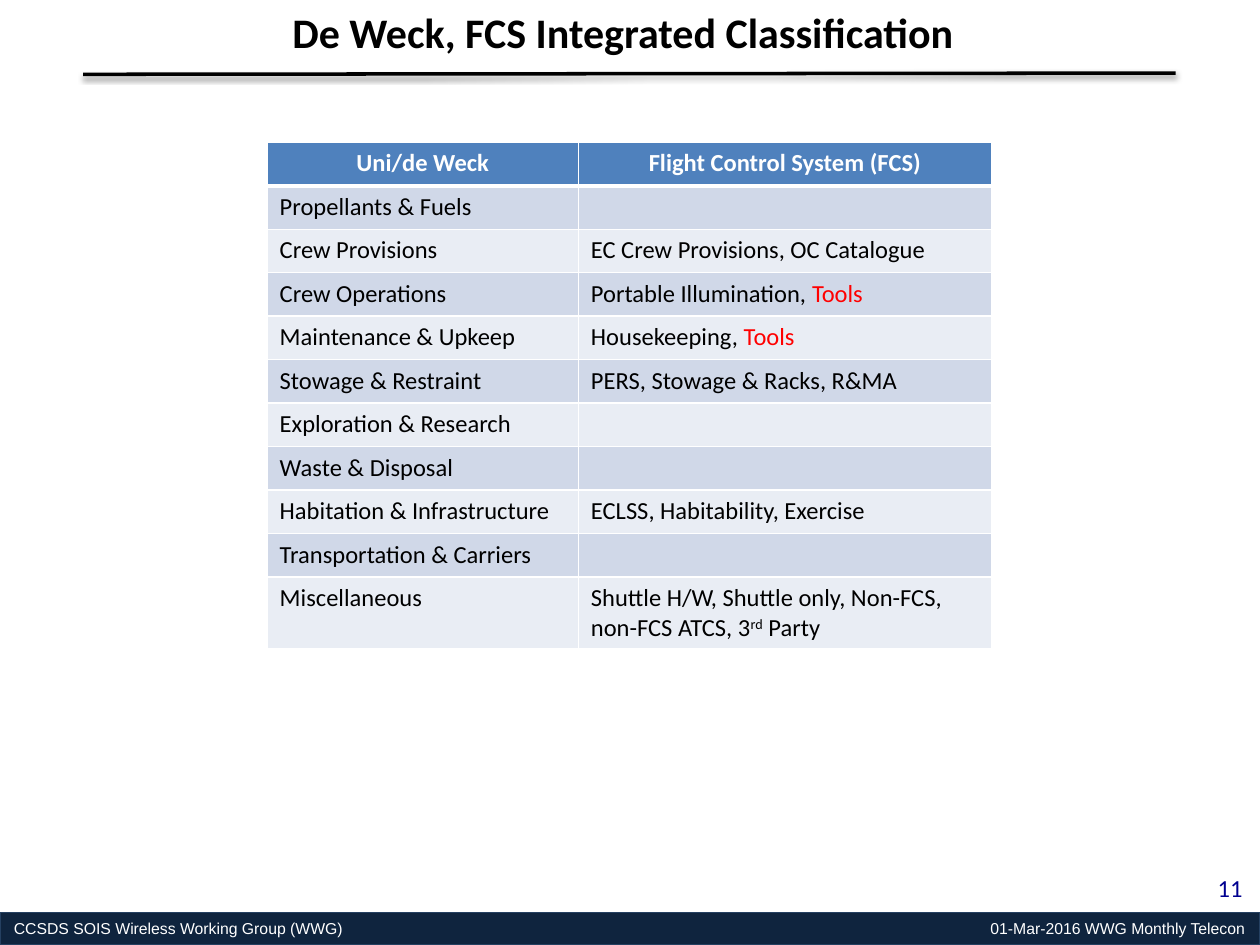
from lxml import etree
from pptx import Presentation
from pptx.dml.color import RGBColor
from pptx.enum.shapes import MSO_CONNECTOR, MSO_SHAPE
from pptx.enum.text import MSO_ANCHOR, MSO_AUTO_SIZE, PP_ALIGN
from pptx.oxml import parse_xml
from pptx.oxml.ns import qn
from pptx.util import Inches, Pt

STRAIGHT = MSO_CONNECTOR.STRAIGHT
RECTANGLE = MSO_SHAPE.RECTANGLE
TOP, MIDDLE = MSO_ANCHOR.TOP, MSO_ANCHOR.MIDDLE
NO_AUTOFIT = MSO_AUTO_SIZE.NONE
LEFT, CENTER, RIGHT = PP_ALIGN.LEFT, PP_ALIGN.CENTER, PP_ALIGN.RIGHT
TITLE_ONLY = 5
DRAWING_NS = 'xmlns:a="http://schemas.openxmlformats.org/drawingml/2006/main"'

BLACK, WHITE, RED = "000000", "FFFFFF", "FF0000"
HEADER_FILL = "4F81BD"
BAND_FILLS = ("D0D8E8", "E9EDF4")

HEADINGS = ("Uni/de Weck", "Flight Control System (FCS)")
TOOLS = ("Tools", RED, 0)
# Each FCS entry is a list of (text, colour, baseline percent) runs.
CLASSES = [
    ("Propellants & Fuels", []),
    ("Crew Provisions", [("EC Crew Provisions, OC Catalogue", BLACK, 0)]),
    ("Crew Operations", [("Portable Illumination, ", BLACK, 0), TOOLS]),
    ("Maintenance & Upkeep", [("Housekeeping, ", BLACK, 0), TOOLS]),
    ("Stowage & Restraint", [("PERS, Stowage & Racks, R&MA", BLACK, 0)]),
    ("Exploration & Research", []),
    ("Waste & Disposal", []),
    ("Habitation & Infrastructure", [("ECLSS, Habitability, Exercise", BLACK, 0)]),
    ("Transportation & Carriers", []),
    ("Miscellaneous", [
        ("Shuttle H/W, Shuttle only, Non-FCS, non-FCS ATCS, 3", BLACK, 0),
        ("rd", BLACK, 30),
        (" Party", BLACK, 0),
    ]),
]


def rgb(value):
    return RGBColor.from_string(value)


def add_run(paragraph, text, size, color, font="Calibri", bold=False, baseline=0):
    run = paragraph.add_run()
    run.text = text
    run.font.size = Pt(size)
    run.font.name = font
    run.font.bold = bold
    run.font.color.rgb = rgb(color)
    if baseline:
        run.font._element.set("baseline", str(baseline * 1000))


def add_footer(slide, left, top, width, height):
    bar = slide.shapes.add_shape(RECTANGLE, left, top, width, height)
    bar.shadow.inherit = False
    bar.fill.solid()
    bar.fill.fore_color.rgb = rgb("0F243E")
    bar.line.color.rgb = rgb("254061")
    bar.line.width = Pt(0.75)
    frame = bar.text_frame
    frame.vertical_anchor = MIDDLE
    frame.margin_left = frame.margin_right = Inches(0.11)
    frame.margin_top = frame.margin_bottom = Inches(0.06)
    line = frame.paragraphs[0]
    line.alignment = LEFT
    date_tab = width - Inches(0.23)
    line._p.get_or_add_pPr().append(parse_xml(
        f'<a:tabLst {DRAWING_NS}><a:tab pos="{date_tab}" algn="r"/></a:tabLst>'))
    add_run(line, "CCSDS SOIS Wireless Working Group (WWG)", 9, WHITE, "Arial")
    add_run(line, "\t01-Mar-2016 WWG Monthly Telecon", 9, WHITE, "Arial")


def add_page_number(slide, left, top, width, height):
    frame = slide.shapes.add_textbox(left, top, width, height).text_frame
    frame.word_wrap = True
    frame.paragraphs[0].alignment = RIGHT
    add_run(frame.paragraphs[0], "11", 14, "000090")


def place_title(slide, left, top, width, height):
    title = slide.shapes.title
    title.left, title.top, title.width, title.height = left, top, width, height
    frame = title.text_frame
    frame.auto_size = NO_AUTOFIT
    frame.word_wrap = False
    frame.vertical_anchor = TOP
    frame.paragraphs[0].alignment = LEFT
    add_run(frame.paragraphs[0], "De Weck, FCS Integrated Classification", 24, BLACK, bold=True)


def add_title_rule(slide, left, top, width, rise):
    rule = slide.shapes.add_connector(STRAIGHT, left, top, left + width, top - rise)
    rule.line.color.rgb = rgb(BLACK)
    rule.line.width = Pt(2)
    rule._element.spPr.append(parse_xml(
        f'<a:effectLst {DRAWING_NS}>'
        f'<a:outerShdw blurRad="{Pt(3.1)}" dist="{Pt(1.6)}" dir="5400000" rotWithShape="0">'
        f'<a:srgbClr val="{BLACK}"><a:alpha val="38000"/></a:srgbClr>'
        '</a:outerShdw></a:effectLst>'))


def style_cell(cell, fill, bottom_width=1):
    """Give the cell white borders and a solid fill."""
    properties = cell._tc.get_or_add_tcPr()
    for side, width in (("L", 1), ("R", 1), ("T", 1), ("B", bottom_width)):
        properties.append(parse_xml(
            f'<a:ln{side} {DRAWING_NS} w="{Pt(width)}"><a:solidFill>'
            f'<a:srgbClr val="{WHITE}"/></a:solidFill></a:ln{side}>'))
    cell.fill.solid()
    cell.fill.fore_color.rgb = rgb(fill)


def fill_class_cell(cell, runs, fill):
    style_cell(cell, fill)
    paragraph = cell.text_frame.paragraphs[0]
    for text, color, baseline in runs:
        add_run(paragraph, text, 14, color, baseline=baseline)
    if not runs:
        etree.SubElement(paragraph._p, qn("a:endParaRPr"), sz="1400")


def add_classification_table(slide, left, top, width, height):
    table = slide.shapes.add_table(
        len(CLASSES) + 1, len(HEADINGS), left, top, width, height).table
    first_column, last_row = Inches(2.47), Inches(0.56)
    table.columns[0].width = first_column
    table.columns[1].width = width - first_column
    for row in table.rows:
        row.height = (height - last_row) // len(CLASSES)
    table.rows[len(CLASSES)].height = last_row

    for column, heading in enumerate(HEADINGS):
        cell = table.cell(0, column)
        style_cell(cell, HEADER_FILL, bottom_width=3)
        paragraph = cell.text_frame.paragraphs[0]
        paragraph.alignment = CENTER
        add_run(paragraph, heading, 14, WHITE, bold=True)
    for index, (name, fcs_runs) in enumerate(CLASSES):
        fill = BAND_FILLS[index % 2]
        fill_class_cell(table.cell(index + 1, 0), [(name, BLACK, 0)], fill)
        fill_class_cell(table.cell(index + 1, 1), fcs_runs, fill)


def main():
    deck = Presentation()
    deck.slide_width, deck.slide_height = Inches(10), Inches(7.5)
    slide = deck.slides.add_slide(deck.slide_layouts[TITLE_ONLY])
    add_footer(slide, 0, Inches(7.24), deck.slide_width, Inches(0.26))
    add_page_number(slide, Inches(9.3), Inches(6.88), Inches(0.66), Inches(0.35))
    place_title(slide, Inches(2.22), 0, Inches(5.54), Inches(0.5))
    add_title_rule(slide, Inches(0.66), Inches(0.59), Inches(8.67), Inches(0.01))
    add_classification_table(slide, Inches(2.12), Inches(1.13), Inches(5.75), Inches(4.01))
    deck.save("out.pptx")


if __name__ == "__main__":
    main()
